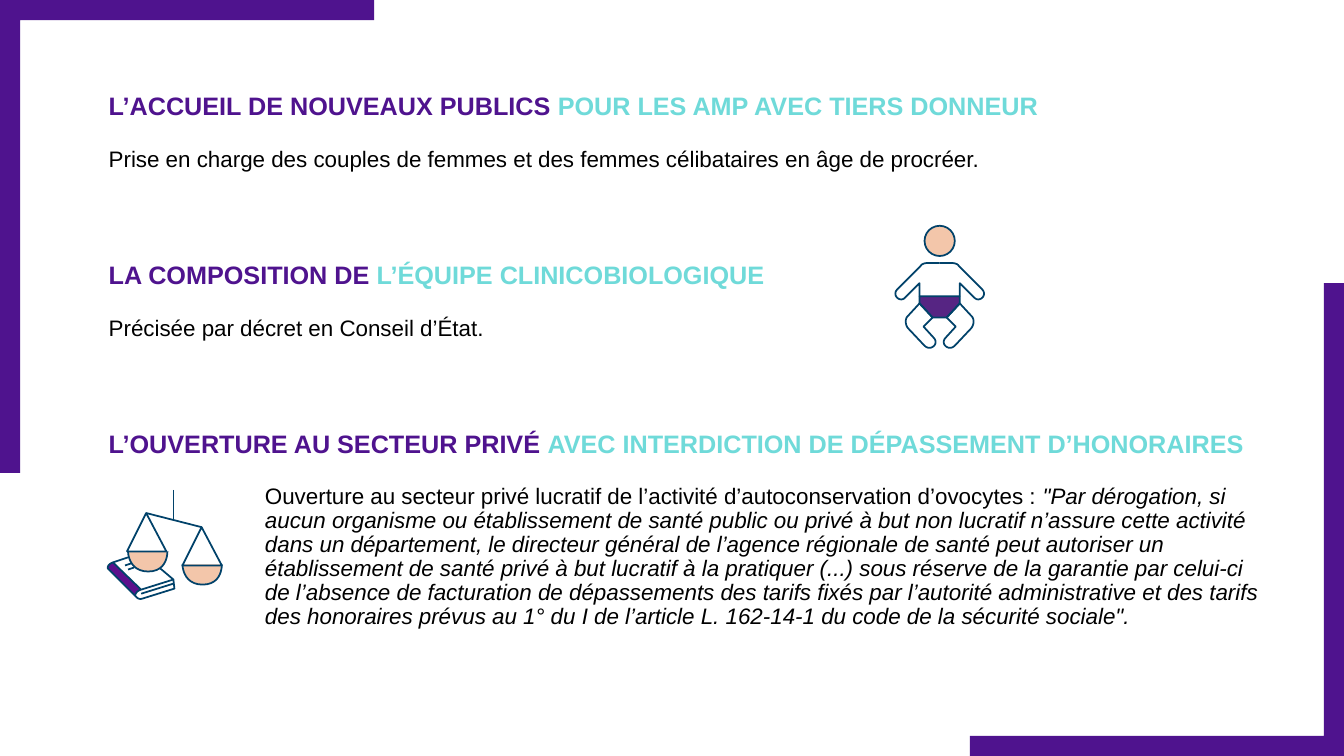
import pptx
import pptx.util
import pptx.dml.color
import pptx.enum.shapes
import pptx.enum.text
import lxml.etree
from dataclasses import dataclass

Inches = pptx.util.Inches
Pt = pptx.util.Pt
RGB = pptx.dml.color.RGBColor.from_string


@dataclass(frozen=True)
class Theme:
    purple: str = "4F138E"
    aqua: str = "6FDAD9"
    text: str = "000000"
    outline: str = "01426A"
    skin: str = "F3C6AA"
    nappy: str = "562583"
    cover: str = "5C108C"
    font: str = "Arial"
    heading: int = 18
    body: int = 16
    stroke: float = 1.25


theme = Theme()
prs = pptx.Presentation()
prs.slide_width, prs.slide_height = Inches(13.33), Inches(7.5)
s = prs.slides.add_slide(prs.slide_layouts[6])


def draw(points, fill=None, line=None, close=False):
    """Draw a path: pairs are line ends, sextuples are cubic curves."""
    x, y = points[0]
    ends = []
    for pt in points[1:]:
        if len(pt) == 2:
            ends.append(pt)
        else:
            x1, y1, x2, y2, x3, y3 = pt
            for t in (i / 12 for i in range(1, 13)):
                u = 1 - t
                a, b, c, d = u**3, 3 * u * u * t, 3 * u * t * t, t**3
                ends.append((a * x + b * x1 + c * x2 + d * x3,
                             a * y + b * y1 + c * y2 + d * y3))
        x, y = pt[-2:]
    fb = s.shapes.build_freeform(Inches(points[0][0]), Inches(points[0][1]))
    fb.add_line_segments([(Inches(px), Inches(py)) for px, py in ends], close=close)
    sp = fb.convert_to_shape()
    sp.shadow.inherit = False
    if fill:
        sp.fill.solid()
        sp.fill.fore_color.rgb = RGB(fill)
    else:
        sp.fill.background()
    if line:
        sp.line.color.rgb = RGB(line)
        sp.line.width = Pt(theme.stroke)
    else:
        sp.line.fill.background()


def add_text(left, top, width, height, size, runs, heading=False):
    """Add a one-paragraph text box; each run is (text, colour, italic)."""
    tf = s.shapes.add_textbox(Inches(left), Inches(top), Inches(width), Inches(height)).text_frame
    tf.word_wrap = True
    tf.auto_size = pptx.enum.text.MSO_AUTO_SIZE.SHAPE_TO_FIT_TEXT
    p = tf.paragraphs[0]
    p.line_spacing = 0.9
    if heading:
        tf.vertical_anchor = pptx.enum.text.MSO_ANCHOR.BOTTOM
    else:
        p.space_before = Pt(12)
    for text, colour, italic in runs:
        r = p.add_run()
        r.text = text
        r.font.name, r.font.size = theme.font, Pt(size)
        r.font.bold, r.font.italic = heading, italic
        r.font.color.rgb = RGB(colour)


# Corner brackets, the second turned half a circle
bracket = [(0, 0), (3.71, 0), (3.71, 0.2), (0.2, 0.2), (0.2, 4.69), (0, 4.69)]
draw(bracket, fill=theme.purple, close=True)
draw([(13.33 - x, 7.5 - y) for x, y in bracket], fill=theme.purple, close=True)

# Headings
for top, width, start, end in [
    (0.88, 11.14, "L’ACCUEIL DE NOUVEAUX PUBLICS ", "POUR LES AMP AVEC TIERS DONNEUR"),
    (2.56, 11.14, "LA COMPOSITION DE ", "L’ÉQUIPE CLINICOBIOLOGIQUE"),
    (4.23, 11.84, "L’OUVERTURE AU SECTEUR PRIVÉ ", "AVEC INTERDICTION DE DÉPASSEMENT D’HONORAIRES"),
]:
    add_text(0.98, top, width, 0.37, theme.heading,
             [(start, theme.purple, False), (end, theme.aqua, False)], heading=True)

# Body texts
quote = (
    "\"Par dérogation, si aucun organisme ou établissement de santé public ou privé à but non "
    "lucratif n’assure cette activité dans un département, le directeur général de l’agence "
    "régionale de santé peut autoriser un établissement de santé privé à but lucratif à la "
    "pratiquer (...) sous réserve de la garantie par celui-ci de l’absence de facturation de "
    "dépassements des tarifs fixés par l’autorité administrative et des tarifs des honoraires "
    "prévus au 1° du I de l’article L. 162‑14‑1 du code de la sécurité sociale\"."
)
for left, top, width, height, plain, italic in [
    (0.98, 1.42, 11.14, 0.34,
     "Prise en charge des couples de femmes et des femmes célibataires en âge de procréer.", ""),
    (0.98, 3.1, 11.14, 0.34, "Précisée par décret en Conseil d’État.", ""),
    (2.53, 4.76, 10.06, 1.56,
     "Ouverture au secteur privé lucratif de l’activité d’autoconservation d’ovocytes : ", quote),
]:
    runs = [(plain, theme.text, False)]
    if italic:
        runs.append((italic, theme.text, True))
    add_text(left, top, width, height, theme.body, runs)

# Baby: nappy and head
draw([(9.12, 2.94), (9.52, 2.94), (9.52, 3.01), (9.39, 3.15), (9.25, 3.15), (9.12, 3.01)],
     fill=theme.nappy, line=theme.outline, close=True)
head = s.shapes.add_shape(pptx.enum.shapes.MSO_SHAPE.OVAL,
                          Inches(9.17), Inches(2.24), Inches(0.3), Inches(0.3))
head.shadow.inherit = False
head.fill.solid()
head.fill.fore_color.rgb = RGB(theme.skin)
head.line.color.rgb = RGB(theme.outline)
head.line.width = Pt(theme.stroke)

# Baby: arm and leg, mirrored about the body's axis
axis = 9.32
arm = [(9.32, 2.61), (9.44, 2.61), (9.47, 2.61, 9.5, 2.62, 9.51, 2.64), (9.74, 2.87),
       (9.8, 2.93, 9.71, 3.01, 9.66, 2.95), (9.52, 2.81), (9.52, 2.94)]
leg = [(9.52, 3.01), (9.39, 3.15), (9.48, 3.24), (9.38, 3.35),
       (9.32, 3.41, 9.41, 3.49, 9.47, 3.43), (9.63, 3.26),
       (9.66, 3.23, 9.67, 3.16, 9.63, 3.13), (9.52, 3.01)]
for limb in (arm, leg):
    draw(limb, line=theme.outline)
    draw([tuple(2 * axis - v if i % 2 == 0 else v for i, v in enumerate(pt)) for pt in limb],
         line=theme.outline)

# Book cover, then the scale's bowls
draw([(1.13, 5.58), (1.08, 5.6), (1.07, 5.61, 1.07, 5.64, 1.07, 5.64), (1.34, 5.91),
      (1.34, 5.91, 1.36, 5.86, 1.37, 5.86), (1.39, 5.85)], fill=theme.cover, close=True)
for x, y in [(1.81, 5.6), (1.27, 5.47)]:
    draw([(x, y), (x, y, x, y + 0.2, x + 0.2, y + 0.2),
          (x + 0.4, y + 0.2, x + 0.39, y, x + 0.39, y)], fill=theme.skin, line=theme.outline)

# Book outlines and the scale's strings
draw([(1.27, 5.53), (1.12, 5.58), (1.12, 5.58, 1.06, 5.6, 1.07, 5.64), (1.36, 5.93),
      (1.36, 5.93, 1.38, 5.95, 1.41, 5.94), (1.73, 5.84), (1.72, 5.75), (1.59, 5.64)],
     line=theme.outline)
draw([(1.12, 5.58), (1.4, 5.85), (1.72, 5.75)], line=theme.outline)
draw([(1.34, 5.91), (1.35, 5.86, 1.4, 5.85, 1.4, 5.85)], line=theme.outline)
for x, y in [(1.45, 5.09), (2, 5.23)]:
    draw([(x, y), (x + 0.2, y + 0.38), (x - 0.19, y + 0.38)], line=theme.outline, close=True)

# Straight strokes: hanger, beam, page edge, two title marks
for x1, y1, x2, y2 in [(1.72, 4.86, 1.72, 5.16), (1.45, 5.09, 2, 5.23), (1.4, 5.89, 1.72, 5.79),
                       (1.24, 5.61, 1.3, 5.59), (1.27, 5.65, 1.33, 5.63)]:
    c = s.shapes.add_connector(pptx.enum.shapes.MSO_CONNECTOR.STRAIGHT,
                               Inches(x1), Inches(y1), Inches(x2), Inches(y2))
    c.line.color.rgb = RGB(theme.outline)
    c.line.width = Pt(theme.stroke)
    lxml.etree.SubElement(c._element.spPr, pptx.oxml.ns.qn("a:effectLst"))

prs.save("out.pptx")
